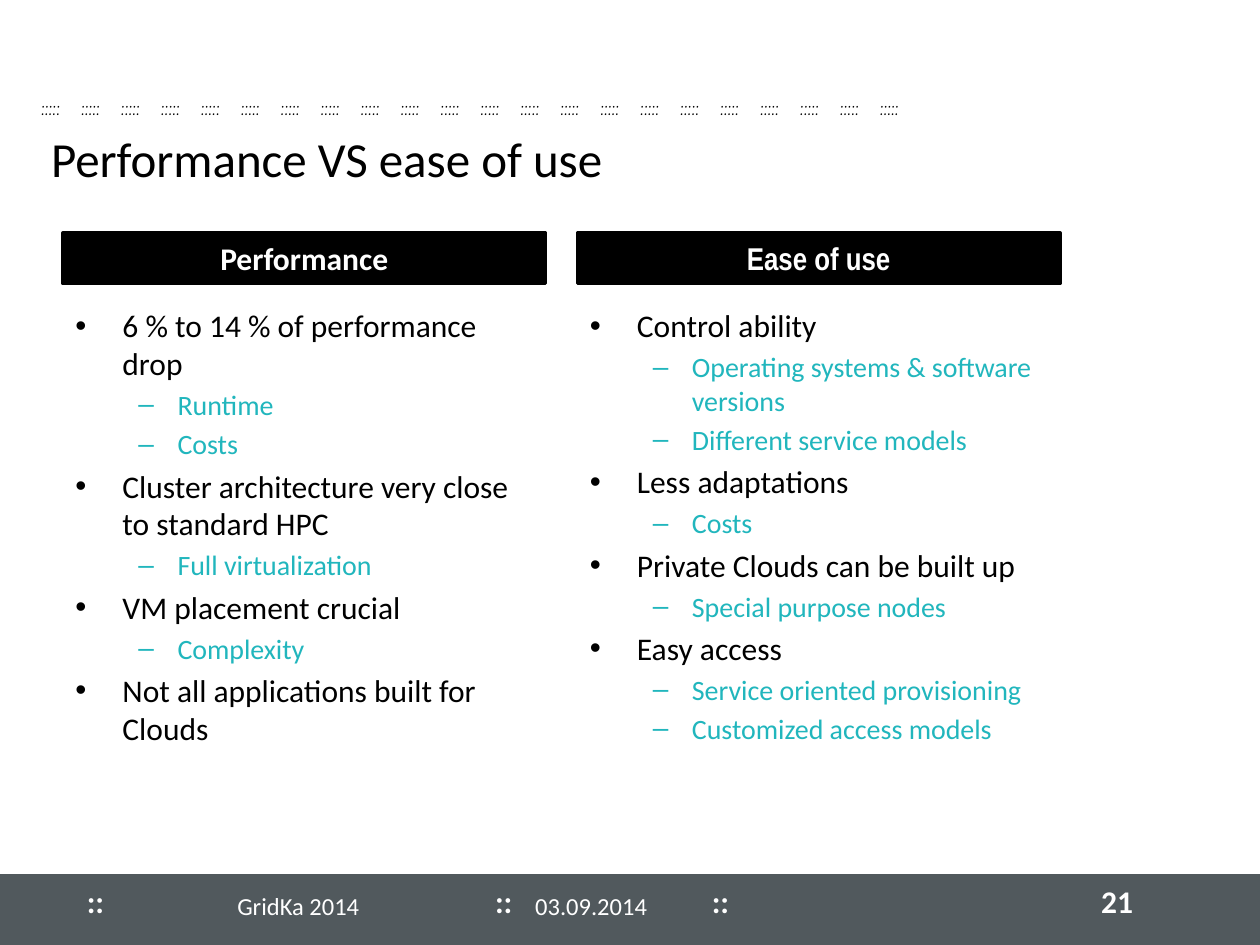
from dataclasses import dataclass

from lxml.etree import SubElement
from pptx import Presentation
from pptx.dml.color import RGBColor
from pptx.enum.shapes import MSO_SHAPE as Shape
from pptx.enum.text import MSO_ANCHOR as Anchor, PP_ALIGN as Align
from pptx.oxml.ns import qn
from pptx.util import Cm, Pt


@dataclass(frozen=True)
class Theme:
    font: str = "Calibri"
    narrow: str = "Arial Narrow"
    dots: str = "Comic Neue"
    black: str = "000000"
    white: str = "FFFFFF"
    teal: str = "21B6BD"
    slate: str = "51595D"
    title: int = 28
    body: int = 18
    sub: int = 16
    footer: int = 14
    tiny: int = 12


T = Theme()

# Per list level: bullet, left indent and hanging indent in cm, size, colour
LEVELS = [("•", 0.95, 0.95, T.body, T.black),
          ("–", 2.06, 0.79, T.sub, T.teal)]

# Column heading, heading font, (level, text) items
COLUMNS = [
    ("Performance", T.font, [
        (0, "6 % to 14 % of performance drop"),
        (1, "Runtime"),
        (1, "Costs"),
        (0, "Cluster architecture very close to standard HPC"),
        (1, "Full virtualization"),
        (0, "VM placement crucial"),
        (1, "Complexity"),
        (0, "Not all applications built for Clouds"),
    ]),
    ("Ease of use", T.narrow, [
        (0, "Control ability"),
        (1, "Operating systems & software versions"),
        (1, "Different service models"),
        (0, "Less adaptations"),
        (1, "Costs"),
        (0, "Private Clouds can be built up"),
        (1, "Special purpose nodes"),
        (0, "Easy access"),
        (1, "Service oriented provisioning"),
        (1, "Customized access models"),
    ]),
]


def style(p, size, color, font=T.font, bold=False):
    for r in p.runs:
        r.font.name, r.font.size, r.font.bold = font, Pt(size), bold
        r.font.color.rgb = RGBColor.from_string(color)


def add_text(s, box, text, size, color, font=T.font, bold=False,
             align=Align.LEFT, anchor=Anchor.TOP):
    tf = s.shapes.add_textbox(*map(Cm, box)).text_frame
    tf.word_wrap = True
    tf.vertical_anchor = anchor
    tf.text = text
    tf.paragraphs[0].alignment = align
    style(tf.paragraphs[0], size, color, font, bold)


def add_bar(s, box, color):
    sp = s.shapes.add_shape(Shape.RECTANGLE, *map(Cm, box))
    sp.shadow.inherit = False
    sp.fill.solid()
    sp.fill.fore_color.rgb = RGBColor.from_string(color)
    sp.line.color.rgb = RGBColor.from_string(color)
    sp.line.width = Pt(2)
    return sp


def add_header(s, x, y, w):
    # Dotted rule above the title
    add_text(s, (x, y, w - 1.19, 0.76), "   ".join([":::::"] * 22),
             T.tiny, T.black, T.dots)
    add_text(s, (x + 0.2, y + 0.81, w, 1.17), "Performance VS ease of use",
             T.title, T.black, anchor=Anchor.MIDDLE)


def add_list(s, box, items):
    tf = s.shapes.add_textbox(*map(Cm, box)).text_frame
    tf.word_wrap = True
    for i, (level, text) in enumerate(items):
        bullet, left, hang, size, color = LEVELS[level]
        p = tf.add_paragraph() if i else tf.paragraphs[0]
        p.text = text
        p.level = level
        if i:
            p.space_before = Pt(size * 0.2)
        pPr = p._p.get_or_add_pPr()
        pPr.set("marL", str(Cm(left)))
        pPr.set("indent", str(-Cm(hang)))
        SubElement(pPr, qn("a:buFont"), typeface="Arial")
        SubElement(pPr, qn("a:buChar"), char=bullet)
        style(p, size, color)


def add_column(s, x, y, w, h, heading, font, items):
    tf = add_bar(s, (x, y, w, 1.02), T.black).text_frame
    tf.word_wrap = True
    tf.vertical_anchor = Anchor.TOP
    tf.text = heading
    tf.paragraphs[0].alignment = Align.CENTER
    style(tf.paragraphs[0], T.body, T.white, font, bold=True)
    add_list(s, (x, y + 1.35, w, h - 1.35), items)


def add_footer(s, x, y, w, h):
    add_bar(s, (x, y, w, h), T.slate)
    # Separators between the footer fields
    for dx in (1.5, 9.73, 14.1):
        add_text(s, (x + dx, y, 1.04, 1.02), "::", T.body, T.white, bold=True)
    add_text(s, (x + 1.57, y + 0.1, 8.89, 1.02), "GridKa 2014", T.footer,
             T.white, align=Align.CENTER, anchor=Anchor.MIDDLE)
    add_text(s, (x + 10.54, y + 0.1, 3.73, 1.02), "03.09.2014", T.footer,
             T.white, anchor=Anchor.MIDDLE)
    add_text(s, (x + w - 3.45, y, 3.45, 1.02), "21", T.body, T.white,
             bold=True, anchor=Anchor.MIDDLE)


def main():
    prs = Presentation()
    prs.slide_width, prs.slide_height = Cm(25.4), Cm(19.05)
    s = prs.slides.add_slide(prs.slide_layouts[6])
    add_footer(s, 0, 17.65, 25.4, 1.4)
    add_header(s, 0.58, 1.78, 24)
    width, gap = 9.73, 0.64
    for i, column in enumerate(COLUMNS):
        add_column(s, 1.27 + i * (width + gap), 4.7, width, 12.32, *column)
    prs.save("out.pptx")


if __name__ == "__main__":
    main()
